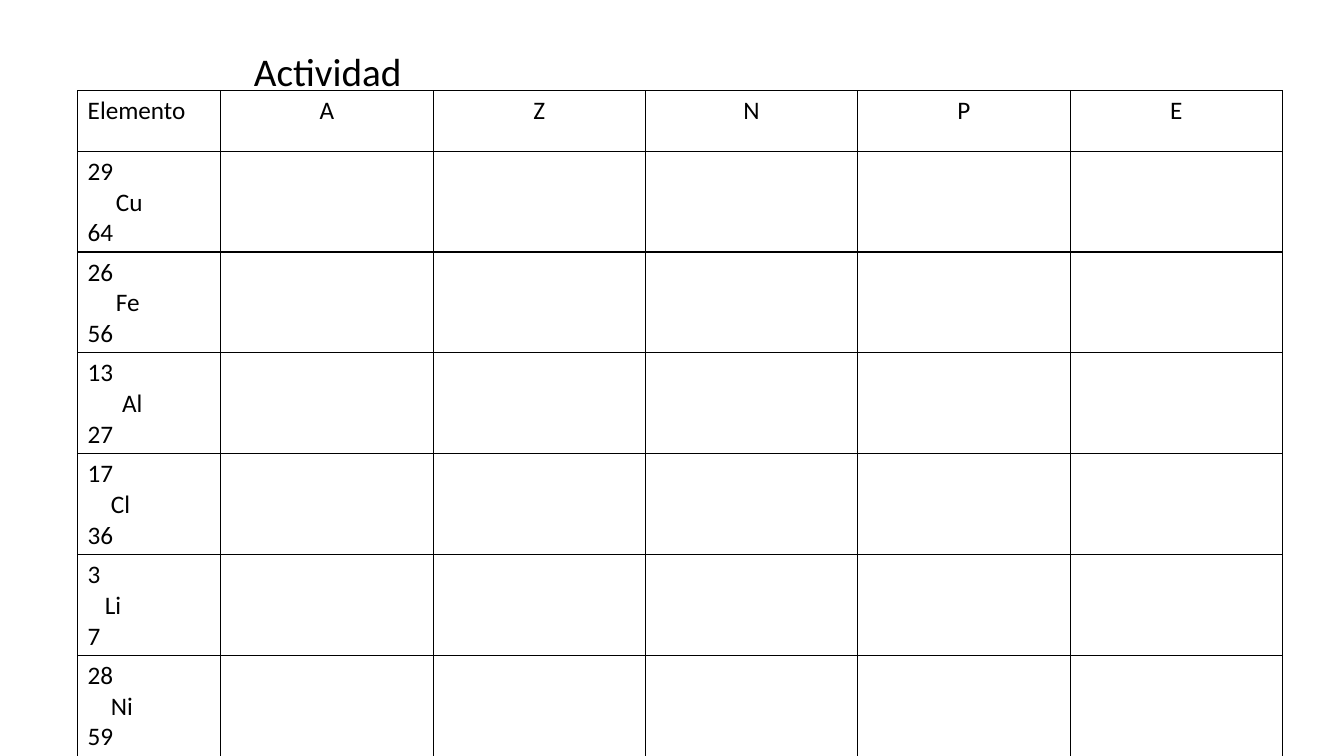
from dataclasses import dataclass

from lxml import etree
from pptx import Presentation
from pptx.dml.color import RGBColor
from pptx.enum.text import MSO_ANCHOR, PP_ALIGN
from pptx.oxml.ns import qn
from pptx.util import Inches, Pt

CENTER = PP_ALIGN.CENTER
LEFT = PP_ALIGN.LEFT
BOTTOM = MSO_ANCHOR.BOTTOM


@dataclass(frozen=True)
class Theme:
    font: str = "Calibri"
    ink: str = "000000"
    title_size: int = 28
    body_size: int = 18
    border_width: int = 1


THEME = Theme()
HEADINGS = ["Elemento", "A", "Z", "N", "P", "E"]
ELEMENTS = [
    ("29", "Cu", "64", 0.28),
    ("26", "Fe", "56", 0.28),
    ("13", "Al", "27", 0.34),
    ("17", "Cl", "36", 0.23),
    ("3", "Li", "7", 0.17),
    ("28", "Ni", "59", 0.23),
]
ELEMENT_WIDTH = 1.42
HEADING_HEIGHT = 0.6


def style(paragraph, size, alignment=LEFT):
    paragraph.alignment = alignment
    paragraph.font.name = THEME.font
    paragraph.font.size = Pt(size)
    paragraph.font.color.rgb = RGBColor.from_string(THEME.ink)


def add_borders(cell):
    properties = cell._tc.get_or_add_tcPr()
    for edge in ("a:lnL", "a:lnR", "a:lnT", "a:lnB"):
        line = etree.SubElement(properties, qn(edge), w=str(Pt(THEME.border_width)))
        fill = etree.SubElement(line, qn("a:solidFill"))
        etree.SubElement(fill, qn("a:srgbClr"), val=THEME.ink)


def add_title(slide, left, top, width, height):
    title = slide.shapes.add_textbox(
        Inches(left), Inches(top), Inches(width), Inches(height)
    ).text_frame
    title.word_wrap = True
    title.vertical_anchor = BOTTOM
    title.margin_bottom = Inches(0.09)
    title.text = "Actividad"
    style(title.paragraphs[0], THEME.title_size)


def fill_element(cell, atomic_number, symbol, mass, indent):
    cell.text = "\n".join((atomic_number, symbol, mass))
    for paragraph in cell.text_frame.paragraphs:
        style(paragraph, THEME.body_size)
    symbol_line = cell.text_frame.paragraphs[1]
    symbol_line._p.get_or_add_pPr().set("marL", str(Inches(indent)))


def add_element_table(slide, left, top, width, height):
    table = slide.shapes.add_table(
        len(ELEMENTS) + 1, len(HEADINGS),
        Inches(left), Inches(top), Inches(width), Inches(height),
    ).table
    table.first_row = False
    table.horz_banding = False

    answer_width = (width - ELEMENT_WIDTH) / (len(HEADINGS) - 1)
    for index, column in enumerate(table.columns):
        column.width = Inches(answer_width if index else ELEMENT_WIDTH)
    element_height = (height - HEADING_HEIGHT) / len(ELEMENTS)
    for index, row in enumerate(table.rows):
        row.height = Inches(element_height if index else HEADING_HEIGHT)

    for index, heading in enumerate(HEADINGS):
        cell = table.cell(0, index)
        cell.text = heading
        style(cell.text_frame.paragraphs[0], THEME.body_size, CENTER if index else LEFT)
    for index, element in enumerate(ELEMENTS, start=1):
        fill_element(table.cell(index, 0), *element)
    for cell in table.iter_cells():
        add_borders(cell)
        cell.fill.background()


def main():
    presentation = Presentation()
    presentation.slide_width = Inches(13.33)
    presentation.slide_height = Inches(7.5)
    slide = presentation.slides.add_slide(presentation.slide_layouts[6])
    add_title(slide, 2.42, 0.26, 8.86, 0.77)
    add_element_table(slide, 0.77, 0.9, 11.95, 6.56)
    presentation.save("out.pptx")


if __name__ == "__main__":
    main()
